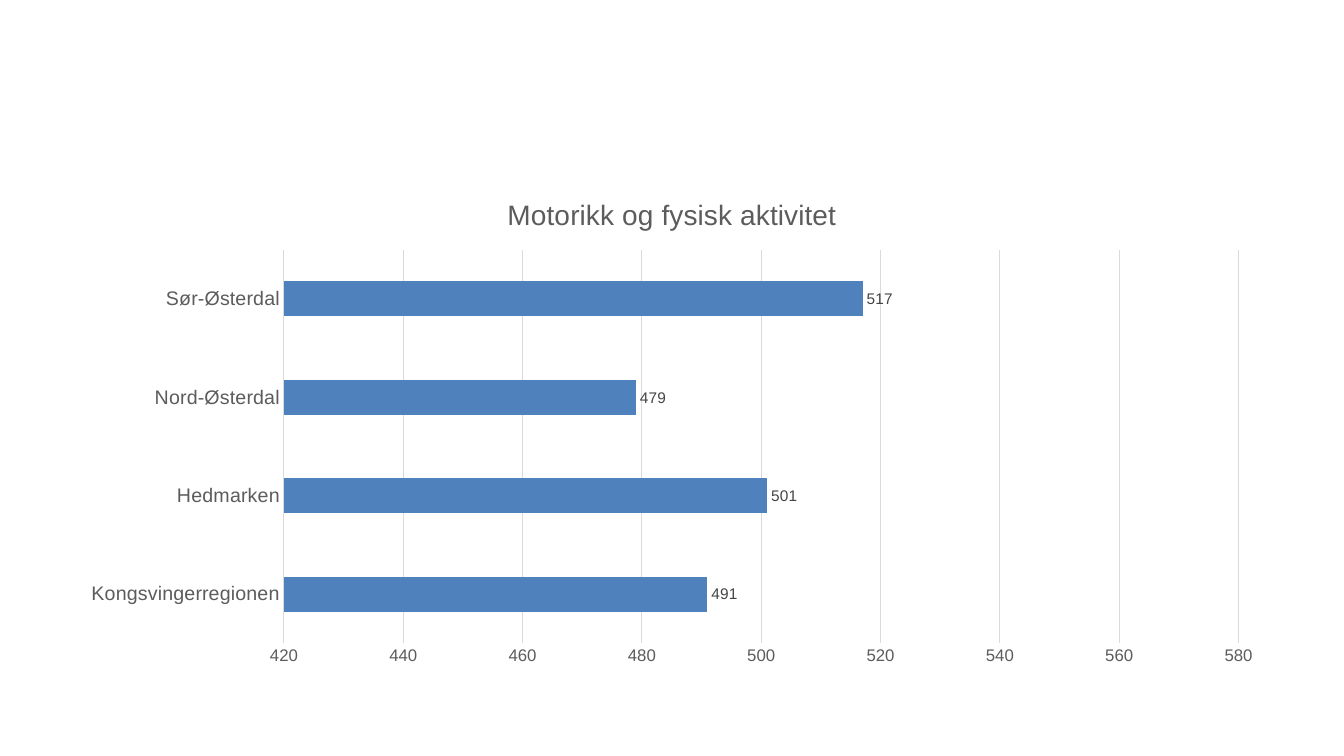
"""Build a slide with a bar chart of motor skills and physical activity by region."""
from pptx import Presentation
from pptx.chart.data import CategoryChartData
from pptx.dml.color import RGBColor
from pptx.enum.chart import XL_CHART_TYPE, XL_LABEL_POSITION, XL_TICK_MARK
from pptx.util import Inches, Pt

BAR = XL_CHART_TYPE.BAR_CLUSTERED
OUTSIDE = XL_LABEL_POSITION.OUTSIDE_END
NO_TICK = XL_TICK_MARK.NONE
FONT = "Arial"
COLORS = {"base": "050505", "text": "5C5C5C", "label": "444444",
          "grid": "DADADA", "bar": "4F81BD"}
TITLE = "Motorikk og fysisk aktivitet"
REGIONS = {"Kongsvingerregionen": 491, "Hedmarken": 501,
           "Nord-Østerdal": 479, "Sør-Østerdal": 517}


def color(name):
    return RGBColor.from_string(COLORS[name])


def style(font, size, name):
    font.name = FONT
    font.size = Pt(size)
    font.bold = False
    font.color.rgb = color(name)


prs = Presentation()
prs.slide_width = Inches(13.33)
prs.slide_height = Inches(7.5)
W, H = prs.slide_width, prs.slide_height
s = prs.slides.add_slide(prs.slide_layouts[6])

data = CategoryChartData(number_format="0")
data.categories = list(REGIONS)
data.add_series(TITLE, list(REGIONS.values()))
chart = s.shapes.add_chart(BAR, int(W * 0.05), int(H * 0.233),
                           int(W * 0.9), int(H * 0.66), data).chart
style(chart.font, 10, "base")
chart.has_legend = False
chart.has_title = True
tf = chart.chart_title.text_frame
tf.text = TITLE
style(tf.paragraphs[0].runs[0].font, 20, "text")
chart.chart_title.include_in_layout = False

cat, val = chart.category_axis, chart.value_axis
for axis, size in ((cat, 14), (val, 12)):
    axis.major_tick_mark = axis.minor_tick_mark = NO_TICK
    style(axis.tick_labels.font, size, "text")

cat.has_major_gridlines = False
val.has_major_gridlines = True
for line in (cat.format.line, val.major_gridlines.format.line):
    line.color.rgb = color("grid")
    line.width = Pt(0.75)

val.format.line.fill.background()
val.minimum_scale, val.maximum_scale, val.major_unit = 420, 580, 20
val.tick_labels.number_format = "0"
val.tick_labels.number_format_is_linked = False

plot = chart.plots[0]
plot.gap_width = 182
plot.vary_by_categories = False
bars = plot.series[0]
bars.invert_if_negative = False
bars.format.fill.solid()
bars.format.fill.fore_color.rgb = color("bar")

labels = bars.data_labels
labels.show_value = True
labels.number_format = "0"
labels.number_format_is_linked = False
labels.position = OUTSIDE
style(labels.font, 11, "label")

prs.save("out.pptx")
